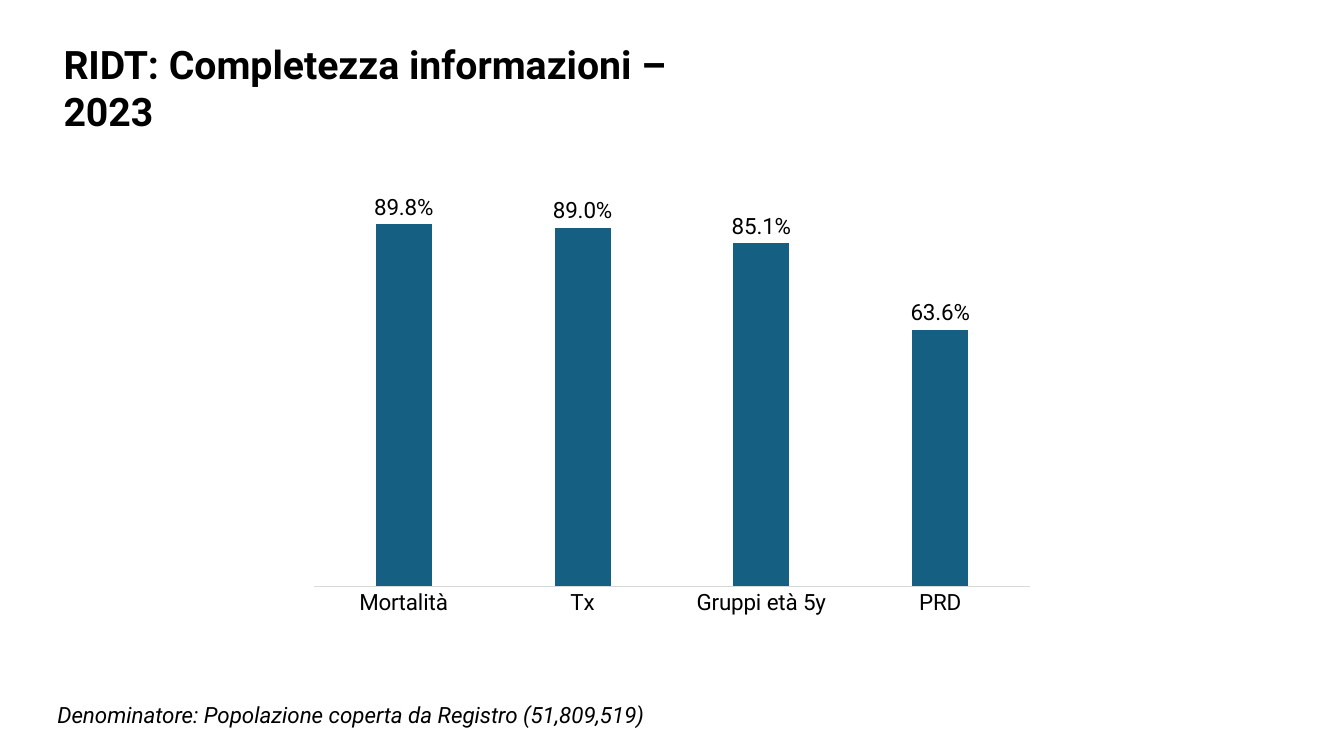
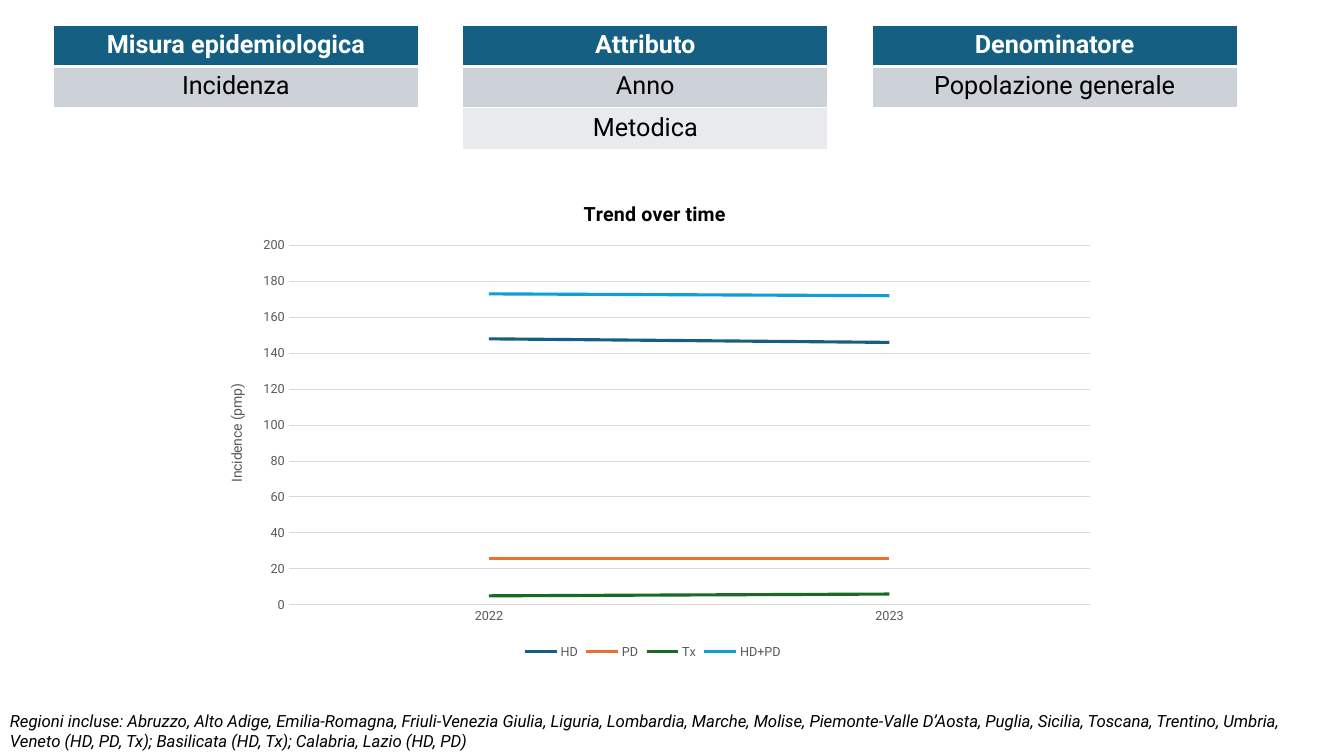
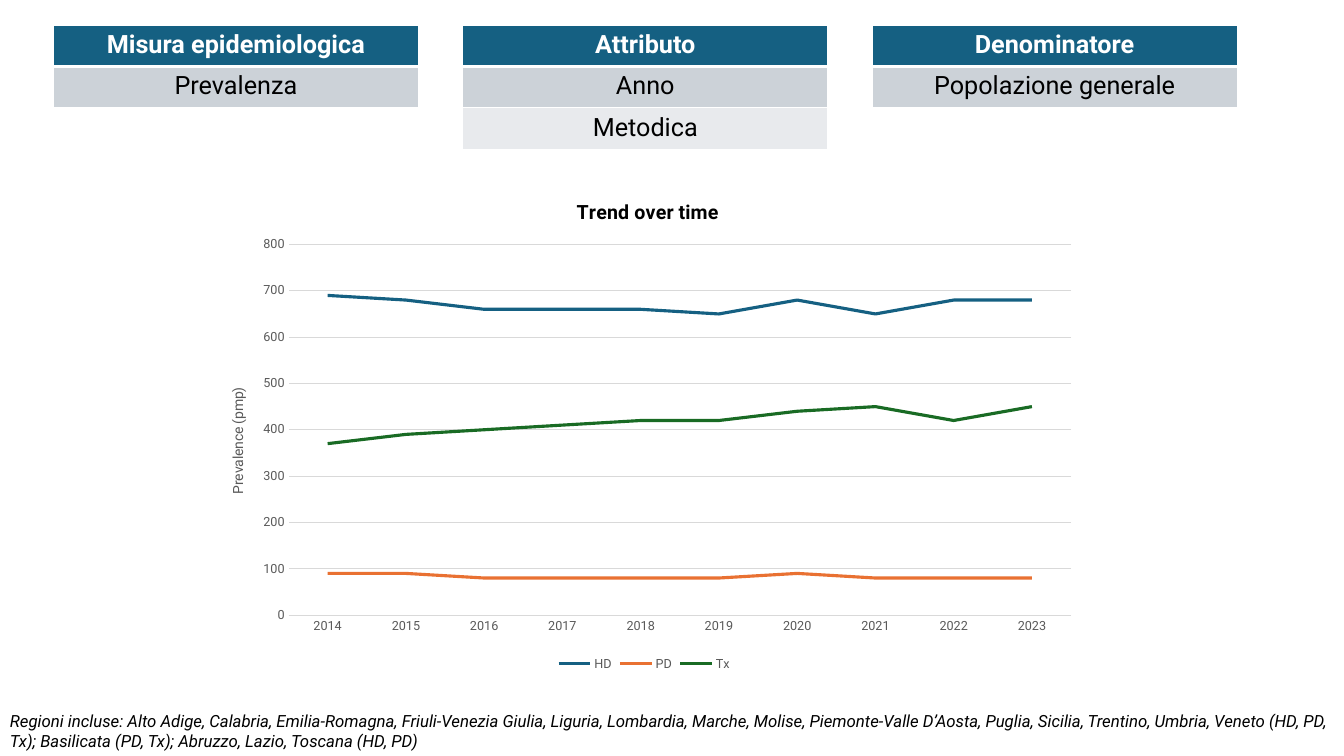
from pptx import Presentation
from pptx.chart.data import CategoryChartData
from pptx.dml.color import RGBColor
from pptx.enum.chart import XL_CHART_TYPE, XL_LABEL_POSITION, XL_LEGEND_POSITION, XL_TICK_MARK
from pptx.enum.text import MSO_ANCHOR, MSO_AUTO_SIZE, PP_ALIGN
from pptx.oxml.ns import qn
from pptx.oxml.xmlchemy import OxmlElement
from pptx.util import Inches, Pt

COLUMN, LINE = XL_CHART_TYPE.COLUMN_CLUSTERED, XL_CHART_TYPE.LINE
OUTSIDE_END = XL_LABEL_POSITION.OUTSIDE_END
LEGEND_BOTTOM = XL_LEGEND_POSITION.BOTTOM
NO_TICK = XL_TICK_MARK.NONE
TOP, MIDDLE = MSO_ANCHOR.TOP, MSO_ANCHOR.MIDDLE
GROW = MSO_AUTO_SIZE.SHAPE_TO_FIT_TEXT
LEFT, CENTER = PP_ALIGN.LEFT, PP_ALIGN.CENTER

FONT = "Roboto"
BLACK, WHITE, GREY, RULE = "000000", "FFFFFF", "595959", "D9D9D9"
TEAL = "156082"
ROW_FILLS = [TEAL, "CCD2D8", "E8EAED"]
SERIES_COLOURS = {"HD": TEAL, "PD": "E97132", "Tx": "196B24", "HD+PD": "0F9ED5"}

TABLE_LEFT, TABLE_TOP, TABLE_WIDTH = 0.53, 0.25, 3.62
TABLE_PITCH, ROW_HEIGHT = 4.06, 0.41

COMPLETENESS = {
    "title": "RIDT: Completezza informazioni – 2023",
    "values": {"Mortalità": 0.898, "Tx": 0.89, "Gruppi età 5y": 0.851, "PRD": 0.636},
    "note": "Denominatore: Popolazione coperta da Registro (51,809,519)",
}

TRENDS = [
    {
        "measure": "Incidenza",
        "axis": "Incidence (pmp)",
        "chart_at": (1.96, 1.76, 9.03, 4.82),
        "maximum": 200,
        "step": 20,
        "years": range(2022, 2024),
        "series": {"HD": [148, 146], "PD": [26, 26], "Tx": [5, 6], "HD+PD": [173, 172]},
        "note": "Regioni incluse: Abruzzo, Alto Adige, Emilia-Romagna, Friuli-Venezia Giulia, "
                "Liguria, Lombardia, Marche, Molise, Piemonte-Valle D’Aosta, Puglia, Sicilia, "
                "Toscana, Trentino, Umbria, Veneto (HD, PD, Tx); Basilicata (HD, Tx); "
                "Calabria, Lazio (HD, PD)",
    },
    {
        "measure": "Prevalenza",
        "axis": "Prevalence (pmp)",
        "chart_at": (1.98, 1.73, 8.82, 4.97),
        "maximum": 800,
        "step": 100,
        "years": range(2014, 2024),
        "series": {
            "HD": [690, 680, 660, 660, 660, 650, 680, 650, 680, 680],
            "PD": [90, 90, 80, 80, 80, 80, 90, 80, 80, 80],
            "Tx": [370, 390, 400, 410, 420, 420, 440, 450, 420, 450],
        },
        "note": "Regioni incluse: Alto Adige, Calabria, Emilia-Romagna, Friuli-Venezia Giulia, "
                "Liguria, Lombardia, Marche, Molise, Piemonte-Valle D’Aosta, Puglia, Sicilia, "
                "Trentino, Umbria, Veneto (HD, PD, Tx); Basilicata (PD, Tx); "
                "Abruzzo, Lazio, Toscana (HD, PD)",
    },
]


def rgb(colour):
    return RGBColor.from_string(colour)


def style(font, size, colour=BLACK, bold=False, italic=False):
    font.name, font.size = FONT, Pt(size)
    font.bold, font.italic = bold, italic
    font.color.rgb = rgb(colour)


def rule(line, colour, width):
    line.color.rgb, line.width = rgb(colour), Pt(width)


def add_note(slide, at, text, size, wrap):
    frame = slide.shapes.add_textbox(*map(Inches, at)).text_frame
    frame.word_wrap, frame.auto_size = wrap, GROW
    frame.text = text
    style(frame.paragraphs[0].font, size, italic=True)


def add_borders(cell, bottom):
    properties = cell._tc.get_or_add_tcPr()
    widths = {"a:lnL": 1, "a:lnR": 1, "a:lnT": 1, "a:lnB": bottom}
    for index, (tag, width) in enumerate(widths.items()):
        border = OxmlElement(tag)
        border.set("w", str(Pt(width)))
        fill, colour = OxmlElement("a:solidFill"), OxmlElement("a:srgbClr")
        colour.set("val", WHITE)
        fill.append(colour)
        border.append(fill)
        properties.insert(index, border)


def add_heading_table(slide, column, texts):
    left = TABLE_LEFT + column * TABLE_PITCH
    box = (left, TABLE_TOP, TABLE_WIDTH, ROW_HEIGHT * len(texts))
    table = slide.shapes.add_table(len(texts), 1, *map(Inches, box)).table
    for row, text in enumerate(texts):
        header = row == 0
        table.rows[row].height = Inches(ROW_HEIGHT)
        cell = table.cell(row, 0)
        cell.text = text
        cell.fill.solid()
        cell.fill.fore_color.rgb = rgb(ROW_FILLS[row])
        add_borders(cell, bottom=3 if header else 1)
        para = cell.text_frame.paragraphs[0]
        para.alignment = CENTER
        style(para.font, 18, WHITE if header else BLACK, bold=header)


def place(element, index, **fractions):
    """Pin a plot area or chart title at fractions of the chart's size."""
    layout = element.find(qn("c:layout"))
    if layout is None:
        layout = OxmlElement("c:layout")
        element.insert(index, layout)
    settings = {"xMode": "edge", "yMode": "edge", **fractions}
    if "w" in fractions:
        settings = {"layoutTarget": "inner", **settings}
    manual = OxmlElement("c:manualLayout")
    for name, value in settings.items():
        setting = OxmlElement(f"c:{name}")
        setting.set("val", str(value))
        manual.append(setting)
    layout.append(manual)


def add_chart(slide, kind, at, categories, series, number_format, plot):
    data = CategoryChartData(number_format=number_format)
    data.categories = categories
    for name, values in series.items():
        data.add_series(name, values)
    chart = slide.shapes.add_chart(kind, *map(Inches, at), data).chart
    style(chart.font, 10)
    chart.has_title = chart.has_legend = False
    chart.plots[0].vary_by_categories = False
    for axis in (chart.category_axis, chart.value_axis):
        axis.major_tick_mark = axis.minor_tick_mark = NO_TICK
    rule(chart.category_axis.format.line, RULE, 0.75)
    chart.value_axis.minimum_scale = 0
    place(chart._chartSpace.chart.plotArea, 0, **plot)
    return chart


def write_title(owner, text, size, colour, bold, x, y):
    owner.has_title = True
    title = owner.chart_title if hasattr(owner, "chart_title") else owner.axis_title
    title.text_frame.text = text
    style(title.text_frame.paragraphs[0].font, size, colour, bold)
    place(title._element, 1, x=x, y=y)
    return title


def build_completeness(deck):
    slide = deck.slides.add_slide(deck.slide_layouts[5])
    title = slide.shapes.title
    title.left, title.top, title.width, title.height = map(Inches, (0.53, 0.35, 7.02, 0.57))
    frame = title.text_frame
    frame.text = COMPLETENESS["title"]
    frame.word_wrap, frame.auto_size = True, GROW
    frame.vertical_anchor = TOP
    frame.paragraphs[0].alignment = LEFT
    style(frame.paragraphs[0].font, 28, bold=True)

    values = COMPLETENESS["values"]
    chart = add_chart(slide, COLUMN, (2.97, 1.73, 7.39, 4.49), list(values),
                      {"Series 1": list(values.values())}, "0.0%",
                      {"x": 0.02, "y": 0.02, "w": 0.96, "h": 0.89})
    style(chart.category_axis.tick_labels.font, 16)
    axis = chart.value_axis
    axis.visible = axis.has_major_gridlines = False
    axis.maximum_scale, axis.major_unit = 1, 0.2
    plot = chart.plots[0]
    plot.gap_width, plot.overlap = 219, -27
    fill = plot.series[0].format.fill
    fill.solid()
    fill.fore_color.rgb = rgb(TEAL)
    plot.has_data_labels = True
    labels = plot.data_labels
    labels.show_value, labels.position = True, OUTSIDE_END
    labels.number_format, labels.number_format_is_linked = "0.0%", False
    style(labels.font, 16)

    add_note(slide, (0.47, 6.91, 6.08, 0.37), COMPLETENESS["note"], 16, wrap=False)


def build_trend(deck, trend):
    slide = deck.slides.add_slide(deck.slide_layouts[6])
    headings = [
        ("Misura epidemiologica", trend["measure"]),
        ("Attributo", "Anno", "Metodica"),
        ("Denominatore", "Popolazione generale"),
    ]
    for column, texts in enumerate(headings):
        add_heading_table(slide, column, texts)
    add_note(slide, (0, 7, 13.33, 0.5), trend["note"], 12, wrap=True)

    chart = add_chart(slide, LINE, trend["chart_at"], [str(year) for year in trend["years"]],
                      trend["series"], "General",
                      {"x": 0.1, "y": 0.14, "w": 0.88, "h": 0.74})
    write_title(chart, "Trend over time", 14, BLACK, True, 0.42, 0.04)
    axis = chart.value_axis
    axis.maximum_scale, axis.major_unit = trend["maximum"], trend["step"]
    axis.format.line.fill.background()
    rule(axis.major_gridlines.format.line, RULE, 0.75)
    axis_title = write_title(axis, trend["axis"], 10, GREY, False, 0.03, 0.42)
    body = axis_title.text_frame._txBody.bodyPr
    body.set("rot", "-5400000")
    body.set("vert", "horz")
    chart.has_legend = True
    chart.legend.position, chart.legend.include_in_layout = LEGEND_BOTTOM, False
    for font in (axis.tick_labels.font, chart.category_axis.tick_labels.font, chart.legend.font):
        style(font, 9, GREY)
    for series in chart.plots[0].series:
        series.smooth = False
        rule(series.format.line, SERIES_COLOURS[series.name], 2.25)


def main():
    deck = Presentation()
    deck.slide_width, deck.slide_height = Inches(13.33), Inches(7.5)
    build_completeness(deck)
    for trend in TRENDS:
        build_trend(deck, trend)
    deck.save("out.pptx")


if __name__ == "__main__":
    main()
